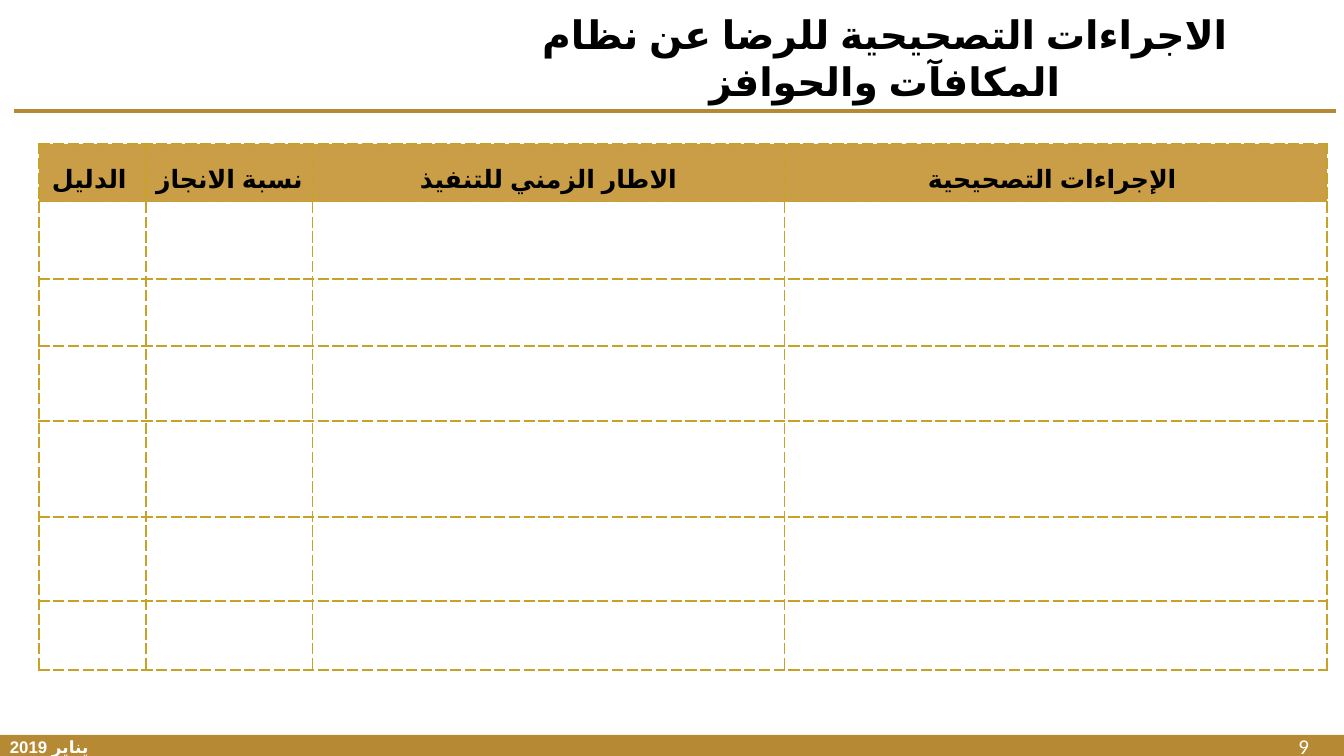
from lxml.etree import SubElement
from pptx import Presentation
from pptx.dml.color import RGBColor
from pptx.enum.lang import MSO_LANGUAGE_ID as Language
from pptx.enum.shapes import MSO_CONNECTOR as Connector, MSO_SHAPE as Shape
from pptx.enum.text import MSO_ANCHOR as Anchor, MSO_AUTO_SIZE as AutoSize, PP_ALIGN as Align
from pptx.oxml.ns import qn
from pptx.util import Inches, Pt

WIDTH, HEIGHT = 13.33, 7.5
GOLD, HEADER_GOLD, BORDER_GOLD = "B68A35", "CA9E46", "C6A326"
BLACK, WHITE = "000000", "FFFFFF"
HEADERS = ["الدليل ", "نسبة الانجاز", "الاطار الزمني للتنفيذ", "الإجراءات التصحيحية "]
COLUMNS = [1.06, 1.65, 4.68, 5.38]
ROWS = [0.57, 0.77, 0.66, 0.75, 0.95, 0.83, 0.69]


def color(value):
    return RGBColor.from_string(value)


def box(left, top, width, height):
    return [Inches(value) for value in (left, top, width, height)]


def write(frame, text, size, fill=BLACK, bold=False, align=None, rtl=False,
          line_spacing=None, space_after=None):
    """Fill a text frame with one formatted paragraph."""
    paragraph = frame.paragraphs[0]
    if align is not None:
        paragraph.alignment = align
    if rtl:
        paragraph._p.get_or_add_pPr().set("rtl", "1")
    if line_spacing:
        paragraph.line_spacing = line_spacing
    if space_after:
        paragraph.space_after = Pt(space_after)
    run = paragraph.add_run()
    run.text = text
    font = run.font
    font.size, font.bold, font.name = Pt(size), bold, "Calibri"
    font.language_id = Language.ARABIC_UAE
    font.color.rgb = color(fill)
    # Arabic letters take the complex-script face
    SubElement(font._element, qn("a:cs"), typeface="Arial")


def add_label(slide, place, text, size, **style):
    frame = slide.shapes.add_textbox(*box(*place)).text_frame
    frame.word_wrap = True
    write(frame, text, size, fill=WHITE, **style)


def add_band(slide, place, fill):
    shape = slide.shapes.add_shape(Shape.RECTANGLE, *box(*place))
    shape.shadow.inherit = False
    shape.fill.solid()
    shape.fill.fore_color.rgb = color(fill)
    shape.line.fill.background()


def add_rule(slide, start, end, y):
    rule = slide.shapes.add_connector(
        Connector.STRAIGHT, Inches(start), Inches(y), Inches(end), Inches(y))
    rule.line.color.rgb = color(GOLD)
    rule.line.width = Pt(3)
    SubElement(rule._element.spPr, qn("a:effectLst"))


def set_title(slide, text):
    title = slide.shapes.title
    title.left, title.top, title.width, title.height = box(5.26, 0.17, 7.03, 0.8)
    frame = title.text_frame
    frame.word_wrap = True
    frame.auto_size = AutoSize.NONE
    frame.vertical_anchor = Anchor.MIDDLE
    write(frame, text, 28, bold=True, align=Align.CENTER, rtl=True)


def set_borders(cell):
    properties = cell._tc.get_or_add_tcPr()
    for side in ("lnL", "lnR", "lnT", "lnB"):
        line = SubElement(properties, qn(f"a:{side}"), w=str(Pt(1.5)))
        fill = SubElement(line, qn("a:solidFill"))
        SubElement(fill, qn("a:srgbClr"), val=BORDER_GOLD)
        SubElement(line, qn("a:prstDash"), val="sysDash")


def add_plan_table(slide, left, top):
    place = box(left, top, sum(COLUMNS), sum(ROWS))
    table = slide.shapes.add_table(len(ROWS), len(COLUMNS), *place).table
    table.horz_banding = False
    for column, width in zip(table.columns, COLUMNS):
        column.width = Inches(width)
    for row, height in zip(table.rows, ROWS):
        row.height = Inches(height)
    for cell in table.iter_cells():
        set_borders(cell)
        cell.fill.background()
    # Header row
    for cell, text in zip(table.rows[0].cells, HEADERS):
        cell.fill.solid()
        cell.fill.fore_color.rgb = color(HEADER_GOLD)
        cell.vertical_anchor = Anchor.MIDDLE
        cell.margin_left = cell.margin_right = Inches(0.06)
        cell.margin_top = cell.margin_bottom = Inches(0.03)
        write(cell.text_frame, text, 18, bold=True, align=Align.CENTER,
              line_spacing=1.5, space_after=6)


def main():
    presentation = Presentation()
    presentation.slide_width = Inches(WIDTH)
    presentation.slide_height = Inches(HEIGHT)
    slide = presentation.slides.add_slide(presentation.slide_layouts[5])

    # Footer band with page number and date
    add_band(slide, (0, HEIGHT - 0.21, WIDTH, 0.21), GOLD)
    add_label(slide, (12.78, 7.23, 0.78, 0.4), "9", 15)
    add_label(slide, (0, 7.26, 2.11, 0.4), "يناير 2019", 12, bold=True)

    # Heading and its rule
    add_rule(slide, 0.14, 13.25, 1.1)
    set_title(slide, "الاجراءات التصحيحية للرضا عن نظام المكافآت والحوافز")

    # Corrective action plan
    add_plan_table(slide, 0.39, 1.43)
    presentation.save("out.pptx")


if __name__ == "__main__":
    main()
